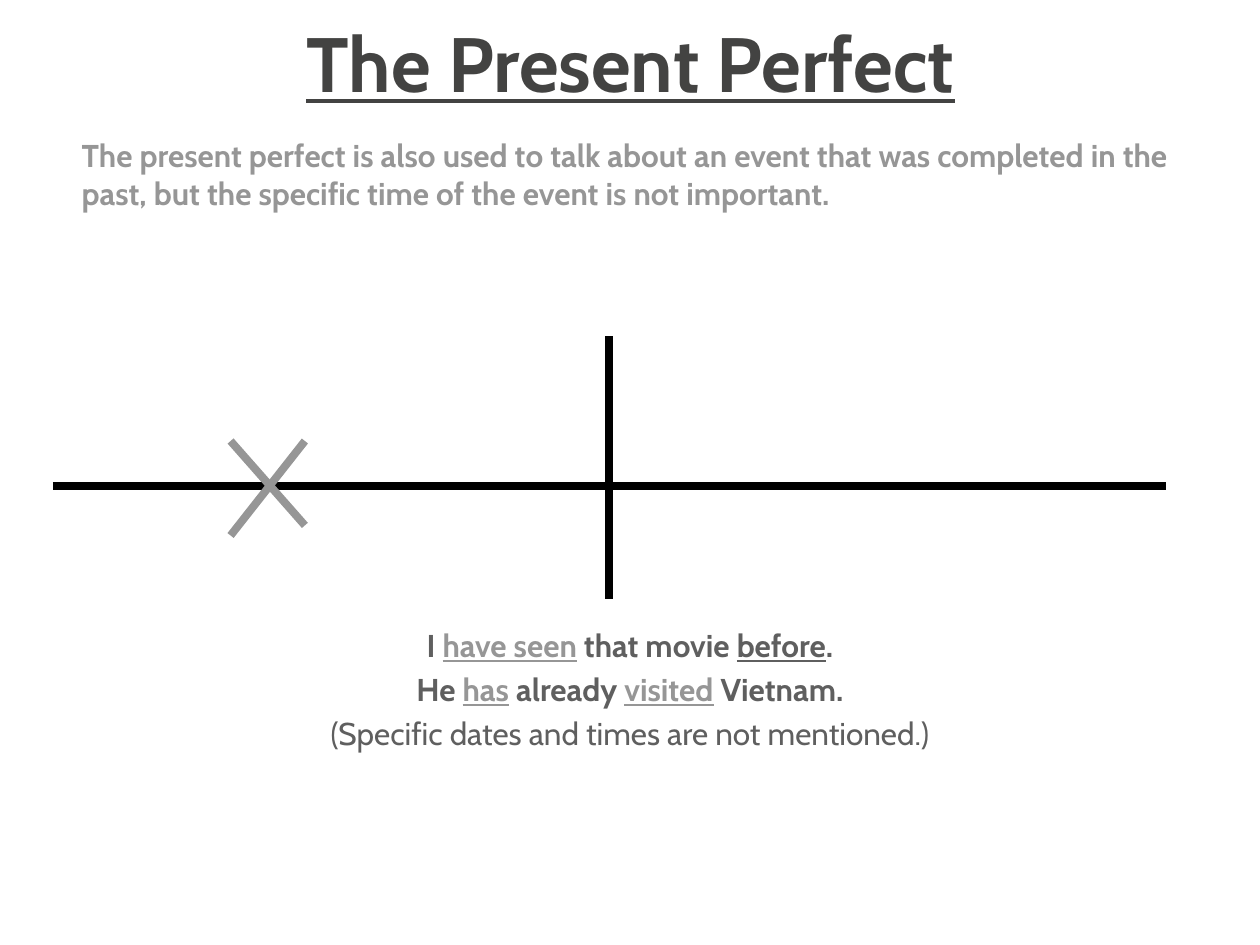
from dataclasses import dataclass

from lxml import etree
from pptx import Presentation
from pptx.dml.color import RGBColor
from pptx.enum.shapes import MSO_CONNECTOR
from pptx.enum.text import MSO_ANCHOR, PP_ALIGN
from pptx.oxml.ns import qn
from pptx.util import Inches, Pt

LINE = MSO_CONNECTOR.STRAIGHT
LEFT, CENTER = PP_ALIGN.LEFT, PP_ALIGN.CENTER
TOP, BOTTOM = MSO_ANCHOR.TOP, MSO_ANCHOR.BOTTOM


@dataclass(frozen=True)
class Theme:
    font: str = "Cabin"
    head: str = "434342"
    body: str = "5F5F5F"
    mark: str = "969696"
    axis: str = "000000"
    title: float = 44
    text: float = 18
    gap: float = 3.6
    stroke: float = 4.5


class Page:
    def __init__(self, slide, theme):
        self.slide = slide
        self.theme = theme

    def fill(self, shape, box, paras, size, align, anchor=TOP, indent=0):
        """Place a shape and write its paragraphs of (text, color, bold, underline) runs."""
        shape.left, shape.top, shape.width, shape.height = map(Inches, box)
        frame = shape.text_frame
        frame.word_wrap = True
        frame.vertical_anchor = anchor
        frame.margin_left = frame.margin_right = Inches(0.1)
        frame.margin_top = frame.margin_bottom = Inches(0.05)
        for i, runs in enumerate(paras):
            para = frame.add_paragraph() if i else frame.paragraphs[0]
            para.alignment = align
            para.space_before = Pt(self.theme.gap if i else 0)
            if indent:
                para._p.get_or_add_pPr().set("marL", str(Inches(indent)))
            for text, color, bold, under in runs:
                run = para.add_run()
                run.text = text
                font = run.font
                font.name, font.size = self.theme.font, Pt(size)
                font.bold, font.underline = bold, under
                font.color.rgb = RGBColor.from_string(color)

    def title(self, box, text):
        theme = self.theme
        self.fill(self.slide.shapes.title, box, [[(text, theme.head, True, True)]],
                  theme.title, CENTER, BOTTOM)

    def text(self, box, paras, align=LEFT, indent=0):
        shape = self.slide.shapes.add_textbox(*map(Inches, box))
        self.fill(shape, box, paras, self.theme.text, align, indent=indent)

    def cross(self, lines, color):
        """Draw a group of straight lines, each given as x1, y1, x2, y2."""
        group = self.slide.shapes.add_group_shape()
        for ends in lines:
            line = group.shapes.add_connector(LINE, *map(Inches, ends))
            line.line.color.rgb = RGBColor.from_string(color)
            line.line.width = Pt(self.theme.stroke)
            etree.SubElement(line._element.spPr, qn("a:effectLst"))


def main():
    deck = Presentation()
    deck.slide_width, deck.slide_height = Inches(10), Inches(7.5)
    theme = Theme()
    page = Page(deck.slides.add_slide(deck.slide_layouts[5]), theme)
    body, mark = theme.body, theme.mark

    # Title and rule
    page.title((0.17, 0.08, 9.67, 0.83), "The Present Perfect")
    rule = ("The present perfect is also used to talk about an event that was "
            "completed in the past, but the specific time of the event is not important.")
    page.text((0.17, 1.03, 9.5, 1.72), [[(rule, mark, True, False)]], indent=0.38)

    # Example sentences
    page.text((0, 4.92, 10, 1), [
        [("I ", body, True, False), ("have seen", mark, True, True),
         (" that movie ", body, True, False), ("before", body, True, True),
         (".", body, True, False)],
        [("He ", body, True, False), ("has", mark, True, True),
         (" already ", body, True, False), ("visited", mark, True, True),
         (" Vietnam.", body, True, False)],
        [("(Specific dates and times are not mentioned.)", body, False, False)],
    ], CENTER)

    # Timeline with the present as its upright, then the past event
    page.cross([(0.42, 3.86, 9.25, 3.86), (4.83, 2.67, 4.83, 4.75)], theme.axis)
    page.cross([(1.83, 3.5, 2.42, 4.17), (2.42, 3.5, 1.83, 4.25)], mark)

    deck.save("out.pptx")


if __name__ == "__main__":
    main()
